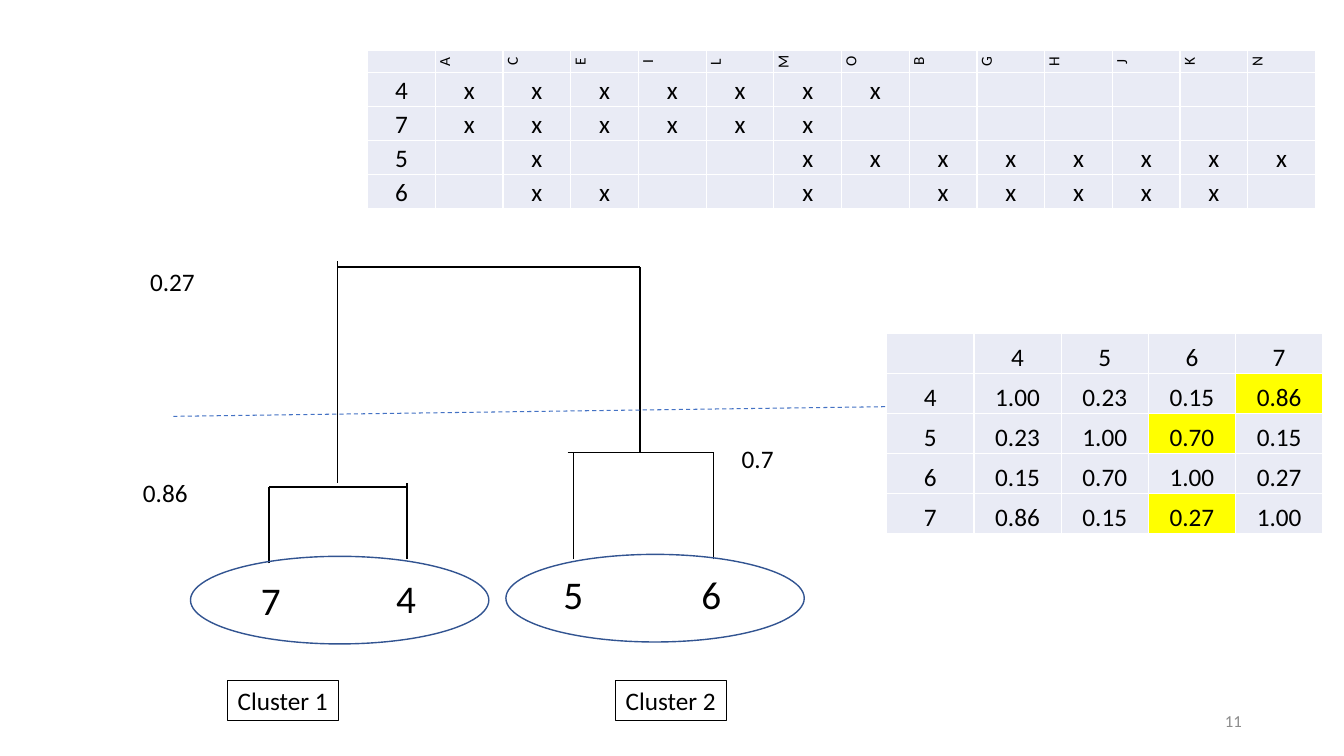
from lxml.etree import SubElement
from pptx import Presentation
from pptx.dml.color import RGBColor
from pptx.enum.dml import MSO_LINE
from pptx.enum.shapes import MSO_CONNECTOR, MSO_SHAPE
from pptx.enum.text import MSO_ANCHOR, MSO_AUTO_SIZE, PP_ALIGN
from pptx.oxml.ns import qn
from pptx.util import Pt

BLACK = "000000"
PALE = "E9EBF5"
YELLOW = "FFFF00"


def paint(color_format, hex_color):
    color_format.rgb = RGBColor.from_string(hex_color)


def write(paragraph, text, size, color=BLACK):
    run = paragraph.add_run()
    run.text = text
    run.font.size = Pt(size)
    run.font.name = "Calibri"
    paint(run.font.color, color)


deck = Presentation()
deck.slide_width, deck.slide_height = Pt(960), Pt(540)
slide = deck.slides.add_slide(deck.slide_layouts[6])
shapes = slide.shapes

# Dendrogram branches and the dashed cut line: x1, y1, x2, y2, width, color
branches = [
    (192.2, 402.5, 192.2, 347.8, 1.5, BLACK),
    (290.9, 399.6, 290.9, 344.9, 1.5, BLACK),
    (192.2, 347.8, 290.9, 347.8, 1, BLACK),
    (409.7, 399.6, 409.7, 323.3, 1, BLACK),
    (509.8, 399.6, 509.8, 323.3, 1, BLACK),
    (405.4, 323.3, 509.8, 323.3, 1, BLACK),
    (241.2, 344.9, 241.2, 186.5, 1, BLACK),
    (457.2, 323.3, 457.2, 190.8, 1, BLACK),
    (241.2, 190.8, 457.2, 190.8, 1, BLACK),
    (123.8, 297.4, 655.2, 290.2, 0.75, "4472C4"),
]
for x1, y1, x2, y2, width, color in branches:
    branch = shapes.add_connector(MSO_CONNECTOR.STRAIGHT, Pt(x1), Pt(y1), Pt(x2), Pt(y2))
    branch.line.width = Pt(width)
    paint(branch.line.color, color)
    SubElement(branch._element.spPr, qn("a:effectLst"))
branch.line.dash_style = MSO_LINE.DASH

# Cluster outlines
for left, top in [(136.1, 397.4), (361.4, 396)]:
    cluster = shapes.add_shape(MSO_SHAPE.OVAL, Pt(left), Pt(top), Pt(213.1), Pt(62.6))
    cluster.shadow.inherit = False
    cluster.fill.background()
    cluster.line.width = Pt(1)
    paint(cluster.line.color, "325491")

# Leaves, similarity levels and framed cluster names
labels = [
    ("7", 179.3, 408.2, 28.8, 41, 28),
    ("4", 275.8, 406.8, 28.8, 41, 28),
    ("5", 395.3, 403.9, 28.8, 41, 28),
    ("6", 493.9, 403.9, 28.8, 41, 28),
    ("0.86", 95, 337.7, 46.8, 28.8, 18),
    ("0.7", 522.7, 313.2, 37.4, 28.8, 18),
    ("0.27", 100.1, 186.5, 46.8, 28.8, 18),
    ("Cluster 1", 162.7, 486, 79.2, 28.8, 18),
    ("Cluster 2", 439.9, 486, 79.2, 28.8, 18),
]
for text, left, top, width, height, size in labels:
    label = shapes.add_textbox(Pt(left), Pt(top), Pt(width), Pt(height))
    label.text_frame.word_wrap = False
    label.text_frame.auto_size = MSO_AUTO_SIZE.SHAPE_TO_FIT_TEXT
    write(label.text_frame.paragraphs[0], text, size)
    if text.startswith("Cluster"):
        label.line.width = Pt(0.75)
        paint(label.line.color, BLACK)

# Attribute table and similarity matrix
attributes = [
    " ACEILMOBGHJKN",
    "4xxxxxxx      ",
    "7xxxxxx       ",
    "5 x   xxxxxxxx",
    "6 xx  x xxxxx ",
]
attribute_rows = [[mark.strip() for mark in row] for row in attributes]
similarity_rows = [
    ["", "4", "5", "6", "7"],
    ["4", "1.00", "0.23", "0.15", "0.86"],
    ["5", "0.23", "1.00", "0.70", "0.15"],
    ["6", "0.15", "0.70", "1.00", "0.27"],
    ["7", "0.86", "0.15", "0.27", "1.00"],
]
merge_cells = {(1, 4), (2, 3), (4, 3)}
tables = [
    (attribute_rows, 262.6, 36.3, 48.38, [15.6] + [24.3] * 4, True, set()),
    (similarity_rows, 633.4, 238.3, 62.3, [28.6] * 5, False, merge_cells),
]
for rows, left, top, column_width, heights, upright_header, highlights in tables:
    columns = len(rows[0])
    grid = shapes.add_table(len(rows), columns, Pt(left), Pt(top),
                            Pt(column_width * columns), Pt(sum(heights))).table
    grid.first_row = grid.horz_banding = False
    for column in grid.columns:
        column.width = Pt(column_width)
    for r, values in enumerate(rows):
        grid.rows[r].height = Pt(heights[r])
        rotated = upright_header and r == 0
        size = 11 if rotated else 18
        for c, value in enumerate(values):
            cell = grid.cell(r, c)
            cell.margin_left = cell.margin_right = cell.margin_top = cell.margin_bottom = 0
            cell.vertical_anchor = MSO_ANCHOR.BOTTOM
            properties = cell._tc.get_or_add_tcPr()
            for side in ("a:lnL", "a:lnR", "a:lnT", "a:lnB"):
                border = SubElement(properties, qn(side), w=str(Pt(1)))
                border_fill = SubElement(border, qn("a:solidFill"))
                SubElement(border_fill, qn("a:srgbClr"), val="FFFFFF")
            cell.fill.solid()
            paint(cell.fill.fore_color, YELLOW if (r, c) in highlights else PALE)
            paragraph = cell.text_frame.paragraphs[0]
            paragraph.alignment = PP_ALIGN.CENTER
            if value:
                write(paragraph, value, size)
                if rotated:
                    properties.set("vert", "vert270")
            else:
                # Keeps empty cells from stretching their row
                SubElement(paragraph._p, qn("a:endParaRPr"), sz=str(size * 100))

# Page number
page = shapes.add_textbox(Pt(678.2), Pt(500.4), Pt(216), Pt(28.8))
page.text_frame.word_wrap = True
page.text_frame.vertical_anchor = MSO_ANCHOR.MIDDLE
page.text_frame.paragraphs[0].alignment = PP_ALIGN.RIGHT
write(page.text_frame.paragraphs[0], "11", 12, "8C8C8C")

deck.save("out.pptx")
